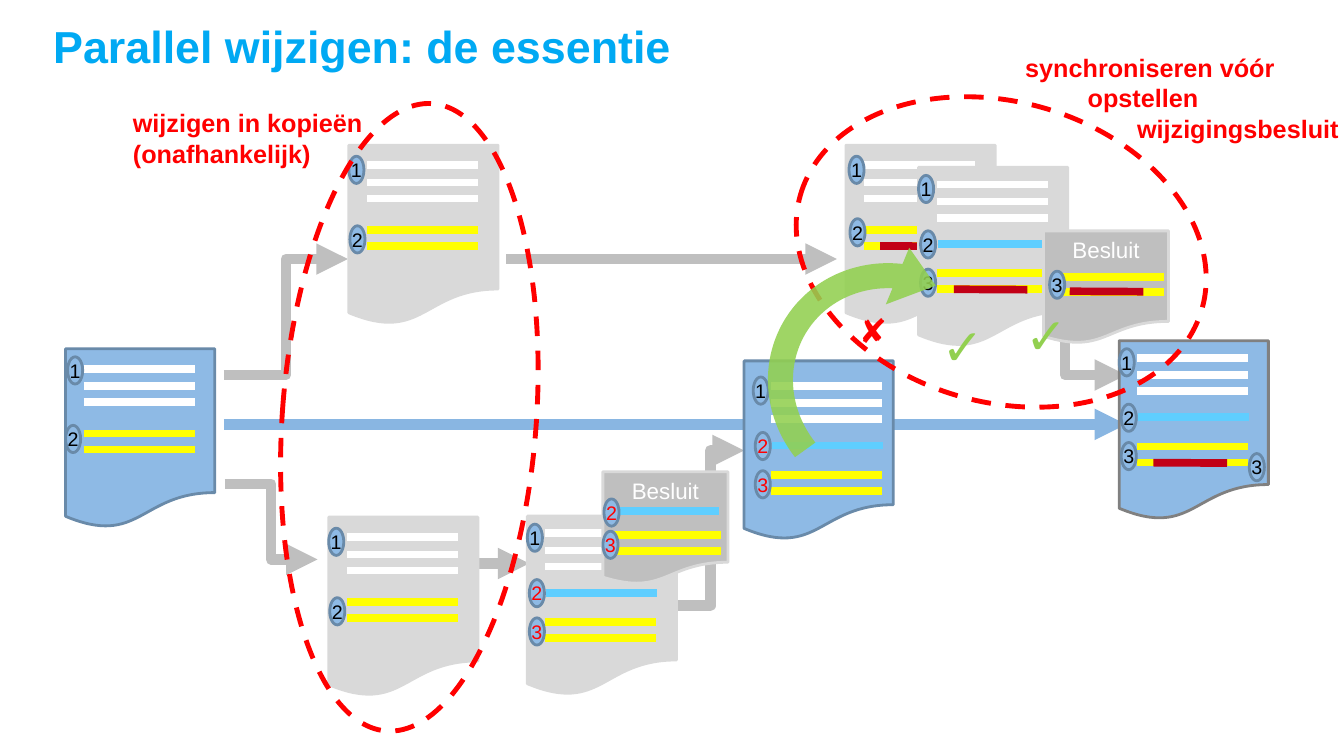
from dataclasses import dataclass

from lxml import etree
from pptx import Presentation
from pptx.dml.color import RGBColor
from pptx.enum.dml import MSO_LINE
from pptx.enum.shapes import MSO_CONNECTOR, MSO_SHAPE
from pptx.enum.text import MSO_ANCHOR, PP_ALIGN
from pptx.oxml.ns import qn
from pptx.util import Inches, Pt

STRAIGHT, ELBOW = MSO_CONNECTOR.STRAIGHT, MSO_CONNECTOR.ELBOW
DOCUMENT, ELLIPSE = MSO_SHAPE.FLOWCHART_DOCUMENT, MSO_SHAPE.OVAL
CIRCULAR_ARROW, DASH = MSO_SHAPE.CIRCULAR_ARROW, MSO_LINE.DASH
TOP, MIDDLE = MSO_ANCHOR.TOP, MSO_ANCHOR.MIDDLE
LEFT, CENTER = PP_ALIGN.LEFT, PP_ALIGN.CENTER


@dataclass(frozen=True)
class Theme:
    font: str = "Arial"
    title: str = "00A9F3"
    red: str = "FF0000"
    green: str = "92D050"
    black: str = "000000"
    white: str = "FFFFFF"
    yellow: str = "FFFF00"
    cyan: str = "5FCEFF"
    crimson: str = "C20016"
    blue: str = "8EBAE5"
    blue_edge: str = "698AA9"
    blue_arrow: str = "89B6E2"
    copy: str = "D9D9D9"
    decision: str = "BFBFBF"
    dark_edge: str = "808080"
    title_size: int = 32
    check_size: int = 36
    cross_size: int = 24
    note_size: int = 18
    decision_size: int = 16
    badge_size: int = 14
    bar_width: float = 5.5
    arrow_width: float = 7.5
    edge_width: float = 2
    dash_width: float = 3.5


THEME = Theme()

# The slide is a grid of 133.3 columns by 75 rows; all lengths are in cells
CELL = 0.1
COLUMNS, ROWS = 133.3, 75
PAGE = (14.8, 17.8)
DECISION = (12.4, 11.2)
BADGE = (1.5, 2.7)
BAR_LENGTH, EDIT_LENGTH, EDIT_DROP = 11, 7.3, 0.04

# Bars: colour, column, row within the page. Badges: label, column, row.
FIRST_BARS = [(THEME.white, 1.8, row) for row in (2, 3.7, 5.3)] + [
    (THEME.yellow, 1.8, row) for row in (8.4, 10)]
FINAL_BARS = [(THEME.white, 1.8, row) for row in (1.7, 3.4, 5)] + [
    (THEME.cyan, 1.9, 7.6), (THEME.yellow, 1.8, 10.5), (THEME.yellow, 1.8, 12.1)]
SHIFTED_BARS = [(color, column + 0.9, row + 0.8) for color, column, row in FINAL_BARS]
FIRST_BADGES = [("1", 0, 1.1), ("2", 0.1, 8)]
FINAL_BADGES = [("1", 0, 0.8), ("2", 0.2, 6.3), ("3", 0.2, 10.1)]
SHIFTED_BADGES = [(label, column + 0.9, row + 0.8) for label, column, row in FINAL_BADGES]

COPY = {"fill": THEME.copy, "edge": THEME.copy}
VALID = {"fill": THEME.blue, "edge": THEME.blue_edge}
RESULT = {"fill": THEME.blue, "edge": THEME.dark_edge}
BESLUIT = {"fill": THEME.decision, "edge": THEME.copy, "caption": "Besluit"}

DOCUMENTS = [
    ((34.6, 14.4, *PAGE), FIRST_BARS, FIRST_BADGES, COPY),
    ((111, 33.8, *PAGE), FINAL_BARS, FINAL_BADGES + [("3", 12.9, 11.2)],
     {**RESULT, "edit": (3.4, 12.1)}),
    ((32.6, 51.3, *PAGE), FIRST_BARS, FIRST_BADGES, COPY),
    ((52.3, 51.2, *PAGE), FINAL_BARS, FINAL_BADGES, {**COPY, "changed": "23"}),
    ((6.5, 34.6, *PAGE), FIRST_BARS, [("1", 0.2, 0.8), ("2", 0, 7.6)], VALID),
    ((59.8, 46.8, *DECISION),
     [(THEME.cyan, 0.5, 3.9), (THEME.yellow, 0.7, 6.3), (THEME.yellow, 0.7, 7.9)],
     [("2", 0.1, 2.7), ("3", 0, 5.9)], {**BESLUIT, "changed": "23"}),
    ((73.8, 35.8, *PAGE), SHIFTED_BARS, SHIFTED_BADGES, {**VALID, "changed": "23"}),
    ((83.9, 14.4, *PAGE), FIRST_BARS, [("1", 0.3, 1.1), ("2", 0.4, 7.3)],
     {**COPY, "edit": (3.4, 10)}),
    ((91.1, 16.6, *PAGE), FINAL_BARS, FINAL_BADGES, {**COPY, "edit": (3.5, 12.1)}),
    ((103.5, 22.9, *DECISION), [(THEME.yellow, 0.9, 4.6), (THEME.yellow, 0.9, 6.1)],
     [("3", 0.6, 4)], {**BESLUIT, "edit": (2.6, 6)}),
]

ARROWS = [
    (STRAIGHT, (22.2, 42.1), (111.7, 42.1), THEME.blue_arrow),
    (ELBOW, (22.2, 37.2), (34.5, 25.7), THEME.decision),
    (STRAIGHT, (50.2, 25.7), (83, 25.7), THEME.decision),
    (ELBOW, (99.6, 25.7), (111.7, 37.2), THEME.decision),
    (ELBOW, (22.3, 48), (31.5, 55.5), THEME.decision),
    (STRAIGHT, (47.5, 55.9), (52.5, 55.9), THEME.decision),
    (ELBOW, (67.1, 60.1), (73.8, 44.7), THEME.decision),
]


def cells(*counts):
    return [Inches(count * CELL) for count in counts]


def set_format(target, values):
    for name, value in values.items():
        setattr(target, name, value)


def write(shape, lines, size, color, bold=False, align=LEFT, indents=(), **frame_format):
    frame = shape.text_frame
    set_format(frame, {"word_wrap": True, "vertical_anchor": TOP, **frame_format})
    for index, line in enumerate(lines):
        paragraph = frame.paragraphs[0] if index == 0 else frame.add_paragraph()
        paragraph.alignment = align
        if indents:
            properties = paragraph._p.get_or_add_pPr()
            properties.set("marL", str(Inches(indents[index] * CELL)))
            properties.set("indent", "0")
        run = paragraph.add_run()
        run.text = line
        set_format(run.font, {"name": THEME.font, "size": Pt(size), "bold": bold})
        run.font.color.rgb = RGBColor.from_string(color)


def add_text(slide, box, lines, size, color, **text_format):
    write(slide.shapes.add_textbox(*cells(*box)), lines, size, color, **text_format)


def add_outline(slide, kind, box, fill=None, edge=None, width=THEME.edge_width):
    shape = slide.shapes.add_shape(kind, *cells(*box))
    shape.shadow.inherit = False
    if fill:
        shape.fill.solid()
        shape.fill.fore_color.rgb = RGBColor.from_string(fill)
    else:
        shape.fill.background()
    if edge:
        shape.line.color.rgb = RGBColor.from_string(edge)
        shape.line.width = Pt(width)
    else:
        shape.line.fill.background()
    return shape


def add_line(slide, kind, start, end, color, width, arrow=False):
    connector = slide.shapes.add_connector(kind, *cells(*start, *end))
    connector.line.color.rgb = RGBColor.from_string(color)
    connector.line.width = Pt(width)
    properties = connector.element.spPr
    if arrow:
        etree.SubElement(properties.find(qn("a:ln")), qn("a:tailEnd"), type="triangle")
    etree.SubElement(properties, qn("a:effectLst"))


def add_document(slide, box, bars, badges, fill, edge, caption=None, edit=None, changed=""):
    left, top = box[:2]
    page = add_outline(slide, DOCUMENT, box, fill, edge)
    if caption:
        write(page, [caption], THEME.decision_size, THEME.white, align=CENTER)
    # Text bars, with the edited passage on top
    strokes = [(color, column, row, BAR_LENGTH, 0) for color, column, row in bars]
    if edit:
        strokes.append((THEME.crimson, *edit, EDIT_LENGTH, EDIT_DROP))
    for color, column, row, length, drop in strokes:
        x, y = left + column, top + row
        add_line(slide, STRAIGHT, (x, y), (x + length, y + drop), color, THEME.bar_width)
    # Numbered badges
    for label, column, row in badges:
        badge = add_outline(slide, ELLIPSE, (left + column, top + row, *BADGE),
                            THEME.blue, THEME.blue_edge)
        write(badge, [label], THEME.badge_size,
              THEME.red if label in changed else THEME.black, align=CENTER,
              vertical_anchor=MIDDLE, word_wrap=False, margin_left=0,
              margin_right=0, margin_top=0, margin_bottom=0)


def add_highlight(slide, box, rotation):
    ring = add_outline(slide, ELLIPSE, box, edge=THEME.red, width=THEME.dash_width)
    ring.line.dash_style = DASH
    ring.rotation = rotation


def add_sync_arrow(slide, box):
    arrow = add_outline(slide, CIRCULAR_ARROW, box, THEME.green)
    arrow.rotation = 120.2
    # Thickness, head angle, end angle, start angle, head width
    for index, value in enumerate((0.09, 12.44, 198.9, 122.5, 0.11)):
        arrow.adjustments[index] = value
    properties = arrow.element.spPr
    for flip in ("flipH", "flipV"):
        properties.find(qn("a:xfrm")).set(flip, "1")
    color = properties.find(qn("a:solidFill")).find(qn("a:srgbClr"))
    etree.SubElement(color, qn("a:alpha"), val="88000")


def add_annotations(slide):
    # Verdict marks
    add_text(slide, (84.2, 30.3, 4.8, 5), ["✘"], THEME.cross_size, THEME.red, word_wrap=False)
    for left, top in ((100.7, 29.7), (92.4, 30.8)):
        add_text(slide, (left, top, 6.8, 7.1), ["✓"], THEME.check_size, THEME.green, bold=True)
    # Dashed highlights and their notes
    add_highlight(slide, (28, 10.2, 25.2, 62.4), 4.2)
    add_highlight(slide, (78.6, 10.1, 41.4, 29.8), 15.7)
    add_text(slide, (12.2, 10.2, 25, 7.1), ["wijzigen in kopieën", "(onafhankelijk)"],
             THEME.note_size, THEME.red, bold=True, word_wrap=False)
    add_text(slide, (100.7, 4.7, 33.4, 10.1),
             ["synchroniseren vóór", "opstellen", "wijzigingsbesluit"],
             THEME.note_size, THEME.red, bold=True, indents=(0, 6.2, 11.1))
    add_sync_arrow(slide, (74.9, 23.8, 27.6, 29))


def main():
    presentation = Presentation()
    presentation.slide_width, presentation.slide_height = cells(COLUMNS, ROWS)
    slide = presentation.slides.add_slide(presentation.slide_layouts[6])
    add_text(slide, (4.3, 1.3, 109.7, 7.9), ["Parallel wijzigen: de essentie"],
             THEME.title_size, THEME.title, bold=True, vertical_anchor=MIDDLE,
             margin_bottom=Inches(0.19))
    for kind, start, end, color in ARROWS:
        add_line(slide, kind, start, end, color, THEME.arrow_width, arrow=True)
    for box, bars, badges, style in DOCUMENTS:
        add_document(slide, box, bars, badges, **style)
    add_annotations(slide)
    presentation.save("out.pptx")


if __name__ == "__main__":
    main()
